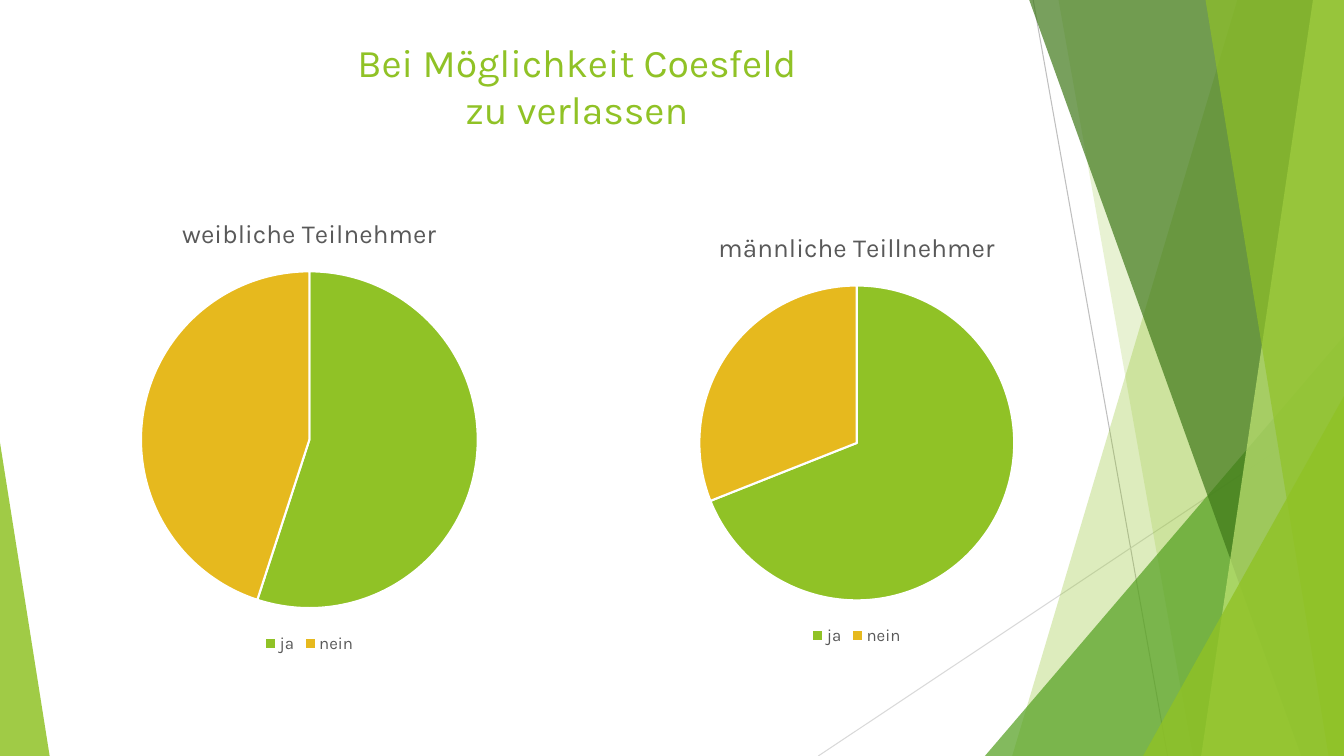
from dataclasses import dataclass
from typing import Any

from lxml import etree
from pptx import Presentation
from pptx import util as u
from pptx.chart.data import CategoryChartData
from pptx.dml.color import RGBColor
from pptx.enum import chart as charts
from pptx.enum import shapes, text
from pptx.oxml.ns import qn


@dataclass(frozen=True)
class Theme:
    font: str = "Karla"
    green: str = "90C226"
    mid_green: str = "54A021"
    dark_green: str = "3F7819"
    light_green: str = "C0E474"
    gold: str = "E6B91E"
    white: str = "FFFFFF"
    grey_text: str = "595959"
    title_size: float = 28
    chart_title_size: float = 18.6
    legend_size: float = 12


@dataclass(frozen=True)
class Ray:
    start: tuple[float, float]
    end: tuple[float, float]
    color: str


@dataclass(frozen=True)
class Facet:
    """A full-height panel from a slanted left edge to the right slide edge."""
    top_x: float
    bottom_x: float
    color: str
    opacity: int


@dataclass(frozen=True)
class Corner:
    """A triangle on the bottom edge; apex is 0 for left and 1 for right."""
    box: tuple[float, float, float, float]
    apex: int
    color: str
    opacity: int


@dataclass(frozen=True)
class Pie:
    title: str
    box: tuple[float, float, float, float]
    values: tuple[int, int]


THEME = Theme()
WIDTH, HEIGHT = 960, 540
FACET_TOP = -0.6
ANSWERS = ("ja", "nein")
TITLE_LINES = ("Bei Möglichkeit Coesfeld", "zu verlassen")
TITLE_BOX = (25, 24, 774, 75)

RAYS = (
    Ray((738, 0), (834, 540), "BFBFBF"),
    Ray((960, 290), (584.5, 540), "D9D9D9"),
)
DECORATION = (
    Facet(884, 723, THEME.green, 30),
    Facet(756, 852, THEME.green, 20),
    Corner((703.5, 240, 256.5, 300), 1, THEME.mid_green, 72),
    Facet(735, 929.5, THEME.dark_green, 70),
    Facet(938, 858, THEME.light_green, 70),
    Facet(861, 949, THEME.green, 65),
    Corner((816.5, 283, 143.5, 257), 1, THEME.green, 80),
    Corner((0, 316, 35.5, 224), 0, THEME.green, 85),
)
PIES = (
    Pie("weibliche Teilnehmer", (0, 140.5, 442, 329), (55, 45)),
    Pie("männliche Teillnehmer", (373, 151, 478, 313), (69, 31)),
)


def points(values: tuple[float, ...]) -> list[u.Length]:
    return [u.Pt(value) for value in values]


def apply_format(target: Any, values: dict[str, Any]) -> None:
    for name, value in values.items():
        setattr(target, name, value)


def style_font(font: Any, size: float, color: str) -> None:
    apply_format(font, {"name": THEME.font, "size": u.Pt(size), "bold": False})
    font.color.rgb = RGBColor.from_string(color)


def add_ray(slide: Any, ray: Ray) -> None:
    line = slide.shapes.add_connector(
        shapes.MSO_CONNECTOR.STRAIGHT, *points(ray.start), *points(ray.end))
    line.line.width = u.Pt(0.75)
    line.line.color.rgb = RGBColor.from_string(ray.color)
    etree.SubElement(line._element.spPr, qn("a:effectLst"))


def add_decoration(slide: Any, item: Facet | Corner) -> None:
    if isinstance(item, Facet):
        builder = slide.shapes.build_freeform(u.Pt(item.top_x), u.Pt(FACET_TOP))
        outline = ((WIDTH, FACET_TOP), (WIDTH, HEIGHT), (item.bottom_x, HEIGHT))
        builder.add_line_segments([points(corner) for corner in outline], close=True)
        shape = builder.convert_to_shape()
    else:
        shape = slide.shapes.add_shape(
            shapes.MSO_SHAPE.ISOSCELES_TRIANGLE, *points(item.box))
        shape.adjustments[0] = item.apex
    shape.shadow.inherit = False
    shape.line.fill.background()
    shape.fill.solid()
    shape.fill.fore_color.rgb = RGBColor.from_string(item.color)
    color = shape._element.spPr.find(f"{qn('a:solidFill')}/{qn('a:srgbClr')}")
    etree.SubElement(color, qn("a:alpha"), val=str(item.opacity * 1000))


def add_title(slide: Any) -> None:
    frame = slide.shapes.add_textbox(*points(TITLE_BOX)).text_frame
    frame.word_wrap = True
    frame.text = "\n".join(TITLE_LINES)
    for paragraph in frame.paragraphs:
        paragraph.alignment = text.PP_ALIGN.CENTER
        style_font(paragraph.runs[0].font, THEME.title_size, THEME.green)


def add_pie(slide: Any, pie: Pie) -> None:
    data = CategoryChartData()
    data.categories = ANSWERS
    data.add_series(pie.title, pie.values)
    chart = slide.shapes.add_chart(
        charts.XL_CHART_TYPE.PIE, *points(pie.box), data).chart
    apply_format(chart, {"has_title": True, "has_legend": True})
    style_font(chart.font, THEME.legend_size, THEME.grey_text)

    chart.chart_title.text_frame.text = pie.title
    heading = chart.chart_title.text_frame.paragraphs[0].runs[0]
    style_font(heading.font, THEME.chart_title_size, THEME.grey_text)
    chart.chart_title.include_in_layout = False

    apply_format(chart.legend, {
        "position": charts.XL_LEGEND_POSITION.BOTTOM,
        "include_in_layout": False,
    })
    style_font(chart.legend.font, THEME.legend_size, THEME.grey_text)

    plot = chart.plots[0]
    plot.vary_by_categories = True
    for index, color in enumerate((THEME.green, THEME.gold)):
        wedge = plot.series[0].points[index].format
        wedge.fill.solid()
        wedge.fill.fore_color.rgb = RGBColor.from_string(color)
        wedge.line.width = u.Pt(1.5)
        wedge.line.color.rgb = RGBColor.from_string(THEME.white)


def main() -> None:
    presentation = Presentation()
    apply_format(presentation, {
        "slide_width": u.Pt(WIDTH), "slide_height": u.Pt(HEIGHT)})
    slide = presentation.slides.add_slide(presentation.slide_layouts[6])
    for ray in RAYS:
        add_ray(slide, ray)
    for item in DECORATION:
        add_decoration(slide, item)
    add_title(slide)
    for pie in PIES:
        add_pie(slide, pie)
    presentation.save("out.pptx")


if __name__ == "__main__":
    main()
